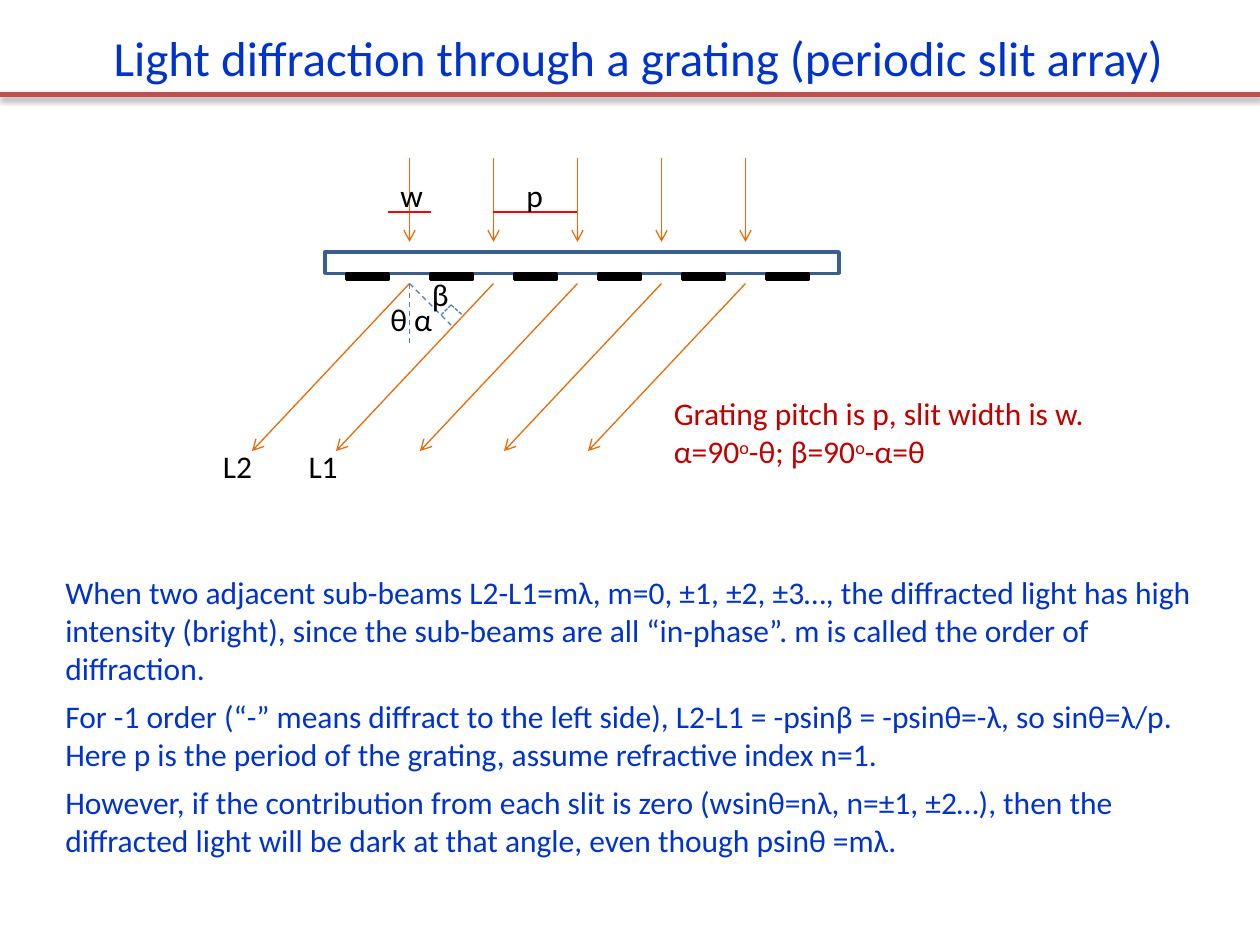
from lxml import etree
from pptx import Presentation
from pptx.dml.color import RGBColor
from pptx.enum import dml, shapes, text
from pptx.oxml import ns
from pptx.util import Inches, Pt

FONT = "Calibri"
COLORS = {
    "blue": "0033CC", "rule": "C0504D", "plate": "3A5F8C", "black": "000000",
    "beam": "E46C0A", "angle": "4B7EBC", "dimension": "FF0000", "note": "C00000",
}
PITCH = 2 / 3  # distance between neighbouring slits
FIRST_SLIT = 3.25
BEAMS = 5
BODY = [
    "When two adjacent sub-beams L2-L1=mλ, m=0, ±1, ±2, ±3…, the diffracted light has "
    "high intensity (bright), since the sub-beams are all “in-phase”. m is called the "
    "order of diffraction.",
    "For -1 order (“-” means diffract to the left side), L2-L1 = -psinβ = -psinθ=-λ, so "
    "sinθ=λ/p. Here p is the period of the grating, assume refractive index n=1.",
    "However, if the contribution from each slit is zero (wsinθ=nλ, n=±1, ±2…), then the "
    "diffracted light will be dark at that angle, even though psinθ =mλ.",
]


def rgb(name):
    return RGBColor.from_string(COLORS[name])


def style_paragraph(paragraph, color, size=18):
    paragraph.font.name = FONT
    paragraph.font.size = Pt(size)
    paragraph.font.color.rgb = rgb(color)


def add_line(slide, start, end, color, width=0.75, dash=None, arrow=False, shadow=False):
    line = slide.shapes.add_connector(
        shapes.MSO_CONNECTOR.STRAIGHT, *(Inches(v) for v in (*start, *end)))
    line.line.color.rgb = rgb(color)
    line.line.width = Pt(width)
    if dash:
        line.line.dash_style = dash
    properties = line._element.spPr
    if arrow:
        etree.SubElement(properties.find(ns.qn("a:ln")), ns.qn("a:tailEnd"), type="arrow")
    effects = etree.SubElement(properties, ns.qn("a:effectLst"))
    if shadow:
        outer = etree.SubElement(
            effects, ns.qn("a:outerShdw"), blurRad=str(Pt(3.1)), dist=str(Pt(1.6)),
            dir="5400000", rotWithShape="0")
        shade = etree.SubElement(outer, ns.qn("a:srgbClr"), val=COLORS["black"])
        etree.SubElement(shade, ns.qn("a:alpha"), val="38000")


def add_bar(slide, box, line_color, fill=None):
    bar = slide.shapes.add_shape(
        shapes.MSO_SHAPE.RECTANGLE, *(Inches(v) for v in box))
    bar.shadow.inherit = False
    if fill:
        bar.fill.solid()
        bar.fill.fore_color.rgb = rgb(fill)
    else:
        bar.fill.background()
    bar.line.color.rgb = rgb(line_color)
    bar.line.width = Pt(2)


def add_text(slide, box, paragraphs, color="black", wrap=False, space_after=None):
    """Each paragraph is a list of runs; ^ marks a superscript run."""
    frame = slide.shapes.add_textbox(*(Inches(v) for v in box)).text_frame
    frame.word_wrap = wrap
    for index, runs in enumerate(paragraphs):
        paragraph = frame.add_paragraph() if index else frame.paragraphs[0]
        style_paragraph(paragraph, color)
        if space_after is not None:
            paragraph.space_after = Pt(space_after)
        for content in runs:
            run = paragraph.add_run()
            run.text = content.lstrip("^")
            if content.startswith("^"):
                run._r.get_or_add_rPr().set("baseline", "30000")


def add_title(slide):
    title = slide.shapes.title
    title.left, title.top, title.width, title.height = (
        Inches(v) for v in (0.75, 0.17, 8.63, 0.57))
    frame = title.text_frame
    frame.text = "Light diffraction through a grating (periodic slit array)"
    frame.word_wrap = False
    frame.auto_size = text.MSO_AUTO_SIZE.NONE
    frame.vertical_anchor = text.MSO_ANCHOR.TOP
    frame.paragraphs[0].alignment = text.PP_ALIGN.CENTER
    style_paragraph(frame.paragraphs[0], "blue", 28)
    add_line(slide, (0, 0.75), (10, 0.75), "rule", 3, shadow=True)


def add_grating(slide):
    add_bar(slide, (2.58, 2, 4.08, 0.17), "plate")
    for i in range(BEAMS + 1):
        add_bar(slide, (2.75 + i * PITCH, 2.17, 0.33, 0.05), "black", "black")


def add_beams(slide):
    slits = [FIRST_SLIT + i * PITCH for i in range(BEAMS)]
    for x in slits:
        add_line(slide, (x, 1.25), (x, 1.92), "beam", arrow=True)
    for x in slits:
        add_line(slide, (x, 2.25), (x - 1.25, 3.58), "beam", arrow=True)


def add_angles(slide):
    dash, fine = dml.MSO_LINE.DASH, dml.MSO_LINE.SQUARE_DOT
    for start, end, style in [
        ((3.25, 2.25), (3.58, 2.58), dash),
        ((3.25, 2.25), (3.25, 2.75), dash),
        ((3.5, 2.5), (3.58, 2.42), fine),
        ((3.58, 2.42), (3.67, 2.5), fine),
    ]:
        add_line(slide, start, end, "angle", dash=style)


def add_dimensions(slide):
    for start, end in [(3.08, 3.42), (FIRST_SLIT + PITCH, FIRST_SLIT + 2 * PITCH)]:
        add_line(slide, (start, 1.68), (end, 1.68), "dimension", 1)


def add_labels(slide):
    for label, left, top, width in [
        ("θ α", 3, 2.33, 0.55), ("β", 3.33, 2.13, 0.34),
        ("w", 3.08, 1.35, 0.38), ("p", 4.08, 1.35, 0.34),
        ("L2", 1.67, 3.5, 0.45), ("L1", 2.35, 3.5, 0.45),
    ]:
        add_text(slide, (left, top, width, 0.4), [[label]])


def main():
    deck = Presentation()
    deck.slide_width, deck.slide_height = Inches(10), Inches(7.5)
    slide = deck.slides.add_slide(deck.slide_layouts[5])

    add_title(slide)

    # Diagram
    add_grating(slide)
    add_beams(slide)
    add_angles(slide)
    add_dimensions(slide)
    add_labels(slide)

    # Explanations
    add_text(slide, (5.25, 3.08, 3.5, 0.71),
             [["Grating pitch is p, slit width is w."],
              ["α=90", "^o", "-θ; β=90", "^o", "-α=θ"]], "note")
    add_text(slide, (0.42, 4.5, 9.33, 2.47), [[item] for item in BODY],
             "blue", wrap=True, space_after=6)

    deck.save("out.pptx")


if __name__ == "__main__":
    main()
